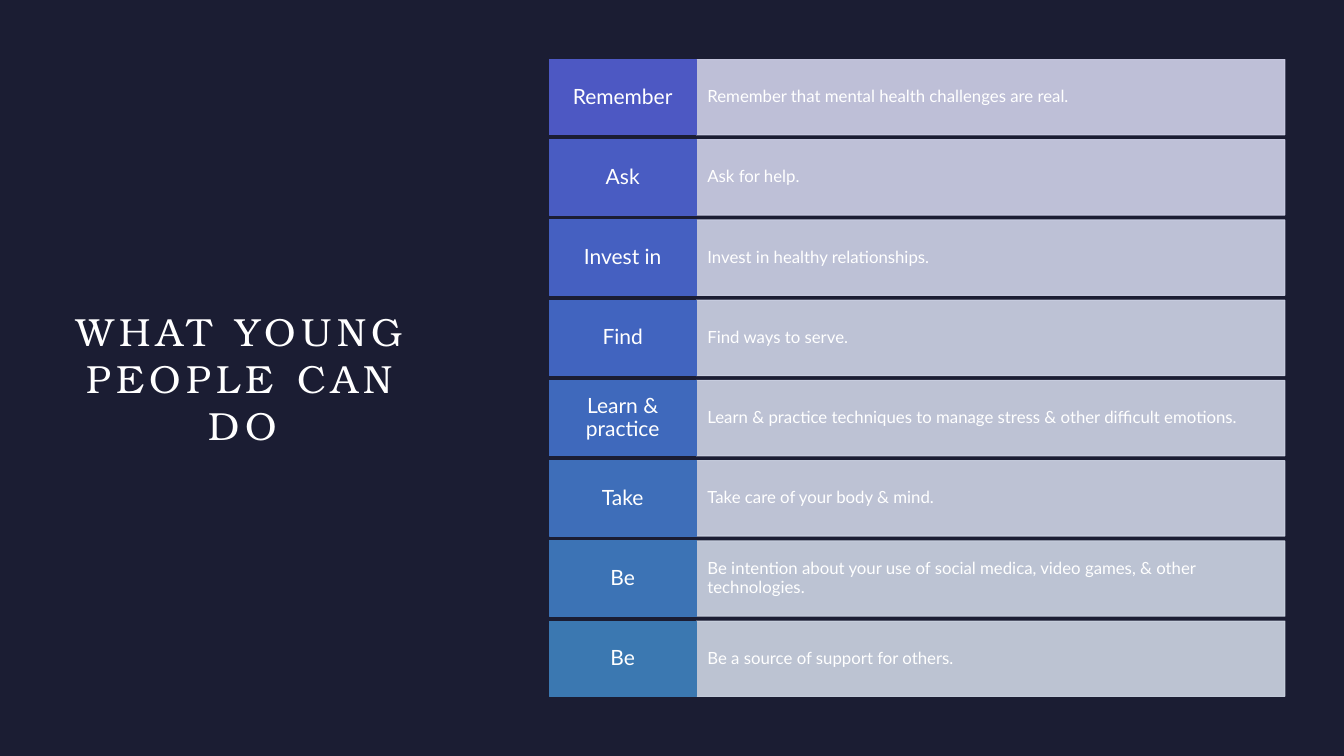
from lxml.etree import SubElement
from pptx import Presentation
from pptx.dml.color import RGBColor
from pptx.enum.shapes import MSO_SHAPE
from pptx.enum.text import MSO_ANCHOR, MSO_AUTO_SIZE, PP_ALIGN
from pptx.oxml.ns import qn
from pptx.util import Cm, Pt

ACTIONS = [
    ("Remember", "Remember that mental health challenges are real.", "4D58C3", "D0D1E9"),
    ("Ask", "Ask for help.", "495CC2", "D0D2E9"),
    ("Invest in", "Invest in healthy relationships.", "4560C1", "CFD3E8"),
    ("Find", "Find ways to serve.", "4164BF", "CFD4E7"),
    ("Learn & practice",
     "Learn & practice techniques to manage stress & other difficult emotions.",
     "3F69BC", "CFD4E6"),
    ("Take", "Take care of your body & mind.", "3E6EB9", "CFD5E6"),
    ("Be",
     "Be intention about your use of social medica, video games, & other technologies.",
     "3C73B5", "CED6E5"),
    ("Be", "Be a source of support for others.", "3B78B1", "CED6E4"),
]
TITLE_FONT = {"name": "TeX Gyre Bonum", "size": Pt(28), "bold": False}
LABEL_FONT = {"name": "Lato", "size": Pt(15)}
DETAIL_FONT = {"name": "Lato", "size": Pt(12)}


def color(value):
    """Turn a hex string into a colour."""
    return RGBColor.from_string(value)


def apply(target, formats):
    """Set each attribute of the target from a dict."""
    for name, value in formats.items():
        setattr(target, name, value)


def write(shape, text, font, align, margins, spacing):
    """Fill a shape with one white, vertically centred paragraph."""
    horizontal, vertical = margins
    frame = shape.text_frame
    apply(frame, {
        "word_wrap": True, "auto_size": MSO_AUTO_SIZE.NONE,
        "vertical_anchor": MSO_ANCHOR.MIDDLE,
        "margin_left": horizontal, "margin_right": horizontal,
        "margin_top": vertical, "margin_bottom": vertical,
    })
    para = frame.paragraphs[0]
    apply(para, {"alignment": align, "line_spacing": spacing})
    span = para.add_run()
    span.text = text
    apply(span.font, font)
    span.font.color.rgb = color("FFFFFF")
    return span


def add_title(page, left, top, width, height):
    """Place the spaced-out title in the given box."""
    title = page.shapes.title
    apply(title, {"left": left, "top": top, "width": width, "height": height})
    span = write(title, "WHAT YOUNG PEOPLE CAN DO", TITLE_FONT,
                 PP_ALIGN.CENTER, (0, 0), 1.0)
    span.font._element.set("spc", "400")


def add_panel(page, box, fill, opacity):
    """Draw a rectangle whose fill and outline share colour and opacity."""
    panel = page.shapes.add_shape(MSO_SHAPE.RECTANGLE, *box)
    panel.shadow.inherit = False
    panel.fill.solid()
    panel.fill.fore_color.rgb = color(fill)
    panel.line.color.rgb = color(fill)
    panel.line.width = Pt(0.75)
    if opacity < 100:
        for tint in panel._element.spPr.iter(qn("a:srgbClr")):
            SubElement(tint, qn("a:alpha")).set("val", str(opacity * 1000))
    return panel


def add_actions(page, left, top, width, height):
    """Stack the action rows evenly, label at left and detail at right."""
    gap = Cm(0.12)
    row_height = int((height - gap * (len(ACTIONS) - 1)) / len(ACTIONS))
    label_width = int(width * 0.2)
    for index, (label, detail, dark, pale) in enumerate(ACTIONS):
        row_top = top + index * (row_height + gap)
        detail_box = (left + label_width, row_top, width - label_width, row_height)
        panel = add_panel(page, detail_box, pale, 90)
        write(panel, detail, DETAIL_FONT, PP_ALIGN.LEFT, (Cm(0.28), Cm(0.48)), 0.9)
        panel = add_panel(page, (left, row_top, label_width, row_height), dark, 100)
        write(panel, label, LABEL_FONT, PP_ALIGN.CENTER, (Cm(0.2), Cm(0.18)), 0.9)


def main():
    """Build and save the slide."""
    deck = Presentation()
    apply(deck, {"slide_width": Cm(33.87), "slide_height": Cm(19.05)})
    page = deck.slides.add_slide(deck.slide_layouts[5])
    page.background.fill.solid()
    page.background.fill.fore_color.rgb = color("1B1D33")
    add_title(page, Cm(1.5), Cm(3), Cm(9.22), Cm(13.03))
    add_actions(page, Cm(13.84), Cm(1.5), Cm(18.54), Cm(16.05))
    deck.save("out.pptx")


if __name__ == "__main__":
    main()
